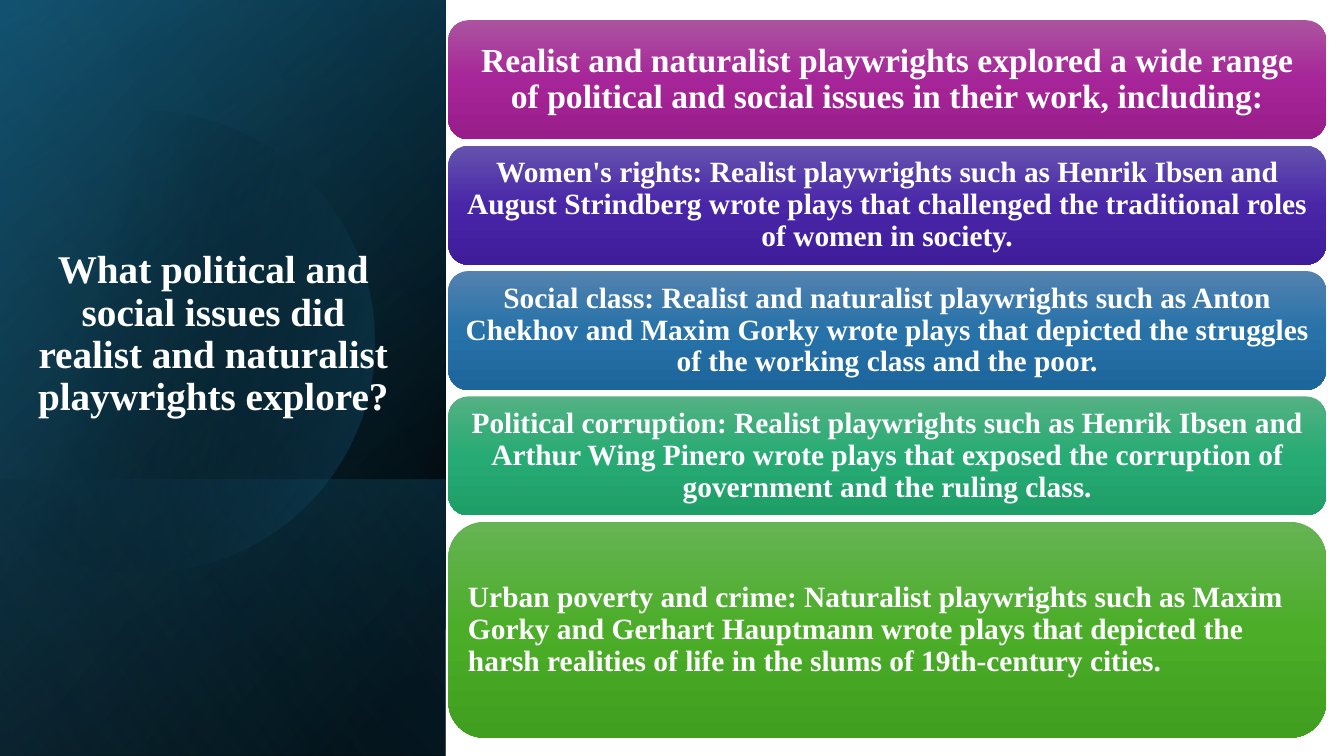
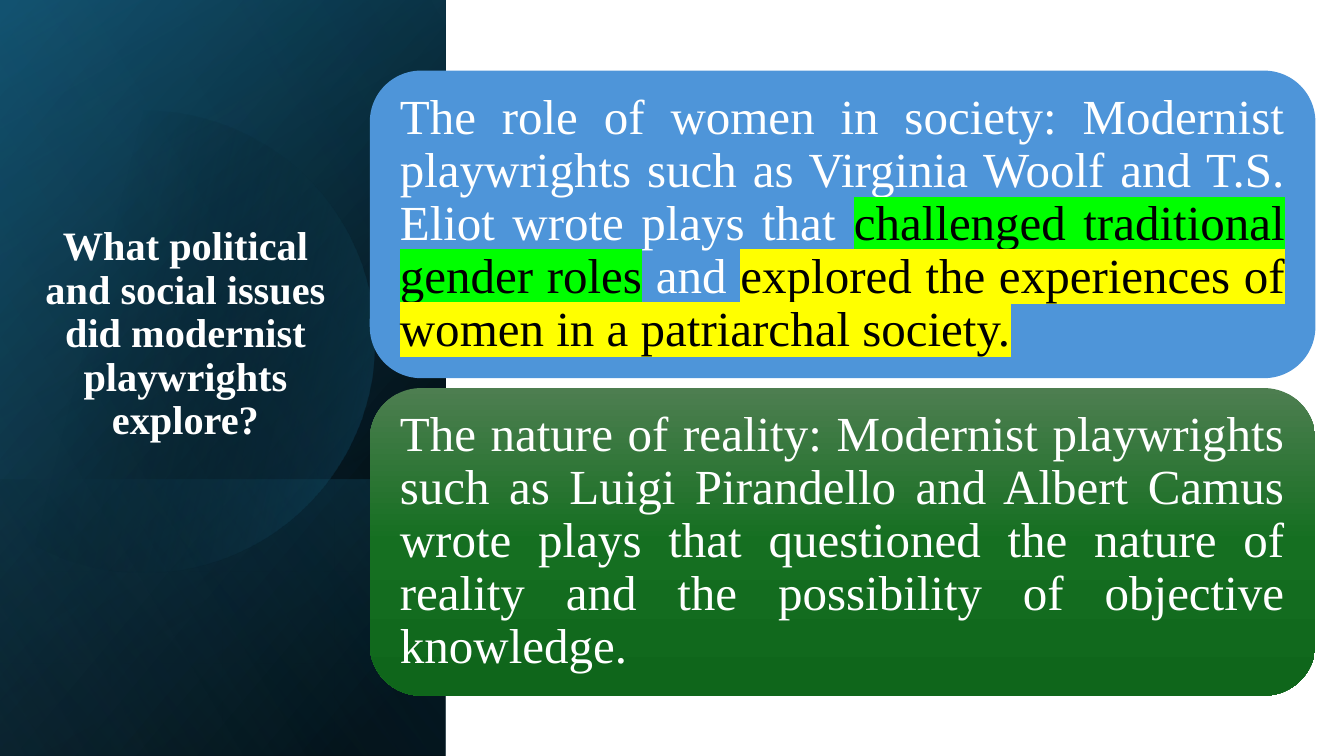
from dataclasses import dataclass
from math import acos, cos, pi, sin

from lxml.etree import SubElement
from pptx import Presentation
from pptx.dml.color import RGBColor
from pptx.enum.shapes import MSO_SHAPE as Shape
from pptx.enum.text import MSO_ANCHOR as Anchor, MSO_AUTO_SIZE as AutoSize, PP_ALIGN as Align
from pptx.oxml.ns import qn
from pptx.util import Cm, Pt


@dataclass(frozen=True)
class Theme:
    font: str = "Times New Roman"
    white: str = "FFFFFF"
    black: str = "000000"
    navy: str = "104862"
    teal: str = "156082"
    sky: str = "46B1E1"
    blue: str = "4E95D9"
    green_mark: str = "00FF00"
    yellow_mark: str = "FFFF00"
    magenta: tuple = ("AC53A0", "A62598", "991C8B")
    violet: tuple = ("6553AE", "4926A8", "3E1C9A")
    azure: tuple = ("5382AF", "2772A9", "1D669C")
    emerald: tuple = ("54B183", "27AB74", "1E9E68")
    lime: tuple = ("66B354", "4BAD28", "409F1E")
    forest: tuple = ("4D7E50", "156F21", "0F661B")
    title_size: float = 28
    large_title_size: float = 28.8
    heading_size: float = 24
    card_size: float = 21
    large_card_size: float = 35


THEME = Theme()


class Deck:
    def __init__(self, theme):
        self.theme = theme
        self.presentation = Presentation()
        self.presentation.slide_width = Cm(33.87)
        self.presentation.slide_height = Cm(19.05)
        self.slide = None

    def add_slide(self):
        layout = self.presentation.slide_layouts[5]
        self.slide = self.presentation.slides.add_slide(layout)
        self.side_panel()

    def finish(self, shape):
        shape.shadow.inherit = False
        shape.line.fill.background()

    def gradient(self, shape, stops, angle):
        shape.fill.gradient()
        shape.fill.gradient_angle = -angle % 360
        stop_list = shape.element.spPr.find(".//" + qn("a:gsLst"))
        stop_list.clear()
        for position, color, opacity in stops:
            stop = SubElement(stop_list, qn("a:gs"), pos=str(position * 1000))
            value = SubElement(stop, qn("a:srgbClr"), val=color)
            if opacity < 100:
                SubElement(value, qn("a:alpha"), val=str(opacity * 1000))

    def panel_layer(self, top, height, stops, angle):
        width = 11.23
        shift = (width - height) / 2
        shape = self.slide.shapes.add_shape(
            Shape.RECTANGLE, Cm(shift), Cm(top - shift), Cm(height), Cm(width))
        shape.rotation = 90
        shape.element.spPr.xfrm.set("flipH", "1")
        self.finish(shape)
        self.gradient(shape, stops, angle)

    def panel_circle(self):
        center_x, center_y, radius, steps = 3.63, 8.61, 5.82, 120
        sweep = pi - acos(center_x / radius)
        angles = [sweep * (2 * step / steps - 1) for step in range(steps + 1)]
        points = [(Cm(center_x + radius * cos(angle)), Cm(center_y + radius * sin(angle)))
                  for angle in angles]
        builder = self.slide.shapes.build_freeform(*points[0])
        builder.add_line_segments(points[1:])
        shape = builder.convert_to_shape()
        self.finish(shape)
        self.gradient(shape, [(29, self.theme.black, 0), (100, self.theme.teal, 43)], 14)

    def side_panel(self):
        theme = self.theme
        self.panel_layer(0, 19.05, [(8, theme.black, 100), (100, theme.navy, 100)], 50)
        self.panel_layer(0, 19.05, [(0, theme.black, 0), (99, theme.teal, 46)], 30)
        self.panel_layer(12.09, 6.96, [(2, theme.teal, 29), (100, theme.black, 30)], 130)
        self.panel_circle()
        self.panel_layer(0, 19.05, [(0, theme.black, 0), (99, theme.sky, 11)], 120)

    def style(self, paragraph, size, bold, align):
        paragraph.alignment = align
        paragraph.line_spacing = 0.9
        font = paragraph.font
        font.name, font.size, font.bold = self.theme.font, Pt(size), bold
        font.color.rgb = RGBColor.from_string(self.theme.white)

    def title(self, text, left, top, width, height, size):
        title = self.slide.shapes.title
        self.slide.shapes.element.append(title.element)
        title.left, title.top, title.width, title.height = map(Cm, (left, top, width, height))
        frame = title.text_frame
        frame.text = text
        frame.word_wrap = True
        frame.auto_size = AutoSize.NONE
        frame.vertical_anchor = Anchor.BOTTOM
        self.style(frame.paragraphs[0], size, True, Align.CENTER)

    def mark(self, run, color):
        run.font.color.rgb = RGBColor.from_string(self.theme.black)
        highlight = SubElement(run.font._element, qn("a:highlight"))
        SubElement(highlight, qn("a:srgbClr"), val=color)

    def card(self, box, fill, parts, size, inset, bold=True, align=Align.CENTER):
        shape = self.slide.shapes.add_shape(Shape.ROUNDED_RECTANGLE, *map(Cm, box))
        self.finish(shape)
        if isinstance(fill, str):
            shape.fill.solid()
            shape.fill.fore_color.rgb = RGBColor.from_string(fill)
        else:
            self.gradient(shape, [(50 * index, color, 100) for index, color in enumerate(fill)], 90)
        frame = shape.text_frame
        frame.word_wrap = True
        frame.vertical_anchor = Anchor.MIDDLE
        frame.margin_left = frame.margin_right = Cm(inset)
        frame.margin_top = frame.margin_bottom = Cm(inset)
        paragraph = frame.paragraphs[0]
        self.style(paragraph, size, bold, align)
        for text, marker in parts:
            run = paragraph.add_run()
            run.text = text
            if marker:
                self.mark(run, marker)


def realist_slide(deck):
    theme = deck.theme
    deck.add_slide()
    deck.title("What political and social issues did realist and naturalist playwrights explore?",
               0.46, 4.67, 9.83, 6.02, theme.title_size)
    size = theme.card_size
    cards = [
        (theme.magenta, theme.heading_size, 3, Align.CENTER,
         "Realist and naturalist playwrights explored a wide range of political and social "
         "issues in their work, including:"),
        (theme.violet, size, 3, Align.CENTER,
         "Women's rights: Realist playwrights such as Henrik Ibsen and August Strindberg wrote "
         "plays that challenged the traditional roles of women in society."),
        (theme.azure, size, 3, Align.CENTER,
         "Social class: Realist and naturalist playwrights such as Anton Chekhov and Maxim Gorky "
         "wrote plays that depicted the struggles of the working class and the poor."),
        (theme.emerald, size, 3, Align.CENTER,
         "Political corruption: Realist playwrights such as Henrik Ibsen and Arthur Wing Pinero "
         "wrote plays that exposed the corruption of government and the ruling class."),
        (theme.lime, size, 5.44, Align.LEFT,
         "Urban poverty and crime: Naturalist playwrights such as Maxim Gorky and Gerhart "
         "Hauptmann wrote plays that depicted the harsh realities of life in the slums of "
         "19th-century cities."),
    ]
    top, gap = 0.51, 0.16
    for fill, text_size, height, align, text in cards:
        deck.card((11.3, top, 22.12, height), fill, [(text, None)], text_size, 0.23, align=align)
        top += height + gap


def modernist_slide(deck):
    theme = deck.theme
    deck.add_slide()
    deck.title("What political and social issues did modernist playwrights explore?",
               0.41, 4.67, 8.53, 6.63, theme.large_title_size)
    cards = [
        (theme.blue, [
            ("The role of women in society: Modernist playwrights such as Virginia Woolf and "
             "T.S. Eliot wrote plays that ", None),
            ("challenged traditional gender roles", theme.green_mark),
            (" and ", None),
            ("explored the experiences of women in a patriarchal society.", theme.yellow_mark)]),
        (theme.forest, [
            ("The nature of reality: Modernist playwrights such as Luigi Pirandello and Albert "
             "Camus wrote plays that questioned the nature of reality and the possibility of "
             "objective knowledge.", None)]),
    ]
    height, gap = 7.75, 0.25
    for index, (fill, parts) in enumerate(cards):
        deck.card((9.32, 1.78 + index * (height + gap), 23.83, height), fill, parts,
                  theme.large_card_size, 0.38, bold=False, align=Align.JUSTIFY)


def main():
    deck = Deck(THEME)
    realist_slide(deck)
    modernist_slide(deck)
    deck.presentation.save("out.pptx")


if __name__ == "__main__":
    main()
